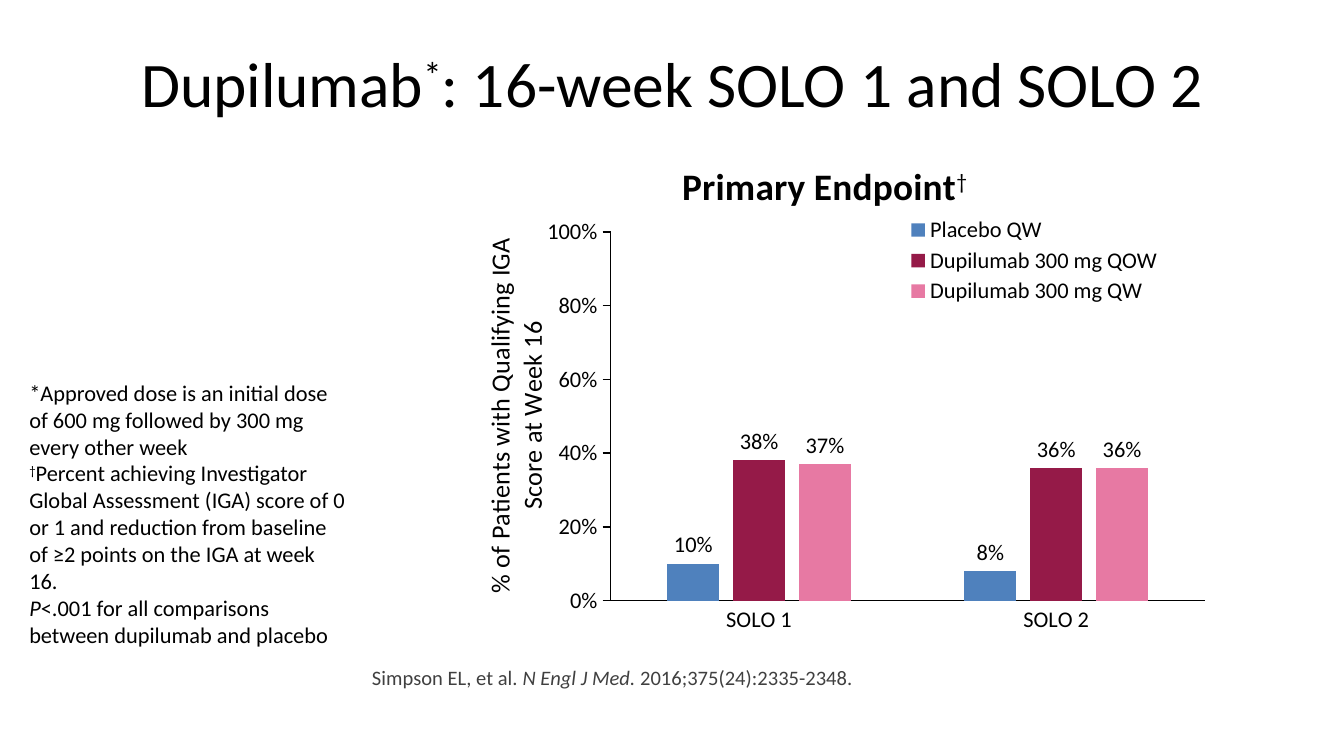
from lxml import etree
from pptx import Presentation
from pptx.chart.data import CategoryChartData
from pptx.dml.color import RGBColor
from pptx.enum import chart as ch, text
from pptx.oxml.ns import qn
from pptx.util import Pt

THEME = {
    "font": "Calibri", "ink": "000000", "grey": "404040",
    "title": 34, "chart_title": 20, "axis_title": 14, "body": 12, "source": 11,
}

# Each paragraph is a list of (words, style) runs
TITLE = [[("Dupilumab", ""), ("*", "super"), (": 16-week SOLO 1 and SOLO 2", "")]]
NOTES = [
    [("*Approved dose is an initial dose of 600 mg followed by 300 mg every other week", "")],
    [("†", "super"), ("Percent achieving Investigator Global Assessment (IGA) score of 0 or 1 "
                      "and reduction from baseline of ≥2 points on the IGA at week 16.", "")],
    [("P", "italic"), ("<.001 for all comparisons between dupilumab and placebo", "")],
]
SOURCE = [[("Simpson EL, et al. ", ""), ("N Engl J Med.", "italic"),
           (" 2016;375(24):2335-2348.", "")]]
CHART_TITLE = [[("Primary Endpoint", "bold"), ("†", "super")]]
AXIS_TITLE = [[("% of Patients with Qualifying IGA Score at Week 16", "")]]
CATEGORIES = ["SOLO 1", "SOLO 2"]
SERIES = [
    ("Placebo QW", (0.10, 0.08), "4F81BD"),
    ("Dupilumab 300 mg QOW", (0.38, 0.36), "951A48"),
    ("Dupilumab 300 mg QW", (0.37, 0.36), "E779A3"),
]

# Left, top, width, height in points
TITLE_BOX = (36, 10, 648, 68)
CHART_BOX = (230.4, 76.3, 415.4, 269.3)
NOTES_BOX = (8.6, 202.3, 183.6, 145.4)
SOURCE_BOX = (192.2, 354.2, 491.8, 46.8)


def rgb(code):
    return RGBColor.from_string(code)


def style_font(font, size, color=THEME["ink"]):
    font.name, font.size, font.bold = THEME["font"], Pt(size), False
    font.color.rgb = rgb(color)


def write(tf, paragraphs, size, color=THEME["ink"], align=None, spacing=None):
    for i, runs in enumerate(paragraphs):
        p = tf.add_paragraph() if i else tf.paragraphs[0]
        p.alignment, p.line_spacing = align, spacing
        for words, style in runs:
            r = p.add_run()
            r.text = words
            style_font(r.font, size, color)
            if style == "bold":
                r.font.bold = True
            elif style == "italic":
                r.font.italic = True
            elif style == "super":
                r._r.get_or_add_rPr().set("baseline", "30000")


def place(parent, before, x, y, w=None, h=None, inner=False):
    """Give a chart part a manual layout, in fractions of the chart."""
    for old in parent.findall(qn("c:layout")):
        parent.remove(old)
    layout = etree.Element(qn("c:layout"))
    manual = etree.SubElement(layout, qn("c:manualLayout"))
    values = [("layoutTarget", "inner")] if inner else []
    values += [("xMode", "edge"), ("yMode", "edge"), ("x", x), ("y", y), ("w", w), ("h", h)]
    for tag, value in values:
        if value is not None:
            etree.SubElement(manual, qn("c:" + tag)).set("val", str(value))
    after = next((e for e in parent if e.tag in [qn("c:" + t) for t in before]), None)
    if after is None:
        parent.append(layout)
    else:
        after.addprevious(layout)


def add_text(slide, box, paragraphs, size, anchor, **options):
    tf = slide.shapes.add_textbox(*map(Pt, box)).text_frame
    tf.word_wrap, tf.vertical_anchor = True, anchor
    write(tf, paragraphs, size, **options)


def add_endpoint_chart(slide):
    data = CategoryChartData(number_format="0%")
    data.categories = CATEGORIES
    for name, values, _ in SERIES:
        data.add_series(name, values)
    chart = slide.shapes.add_chart(
        ch.XL_CHART_TYPE.COLUMN_CLUSTERED, *map(Pt, CHART_BOX), data).chart
    style_font(chart.font, THEME["body"])

    chart.has_title = True
    write(chart.chart_title.text_frame, CHART_TITLE, THEME["chart_title"])
    chart.chart_title.include_in_layout = False
    place(chart.chart_title._element, ("overlay",), 0.32, 0.03)

    plot = chart.plots[0]
    plot.gap_width, plot.overlap, plot.vary_by_categories = 219, -27, False
    for series, (_, _, color) in zip(plot.series, SERIES):
        series.format.fill.solid()
        series.format.fill.fore_color.rgb = rgb(color)
        labels = series.data_labels
        labels.show_value = True
        labels.position = ch.XL_LABEL_POSITION.OUTSIDE_END
        labels.number_format, labels.number_format_is_linked = "0%", False
        style_font(labels.font, THEME["body"])
    place(chart._chartSpace.chart.plotArea, ("barChart",), 0.233, 0.178, 0.767, 0.734, True)

    marks = ch.XL_TICK_MARK
    for axis, mark in ((chart.category_axis, marks.NONE), (chart.value_axis, marks.OUTSIDE)):
        axis.major_tick_mark, axis.minor_tick_mark = mark, marks.NONE
        axis.has_major_gridlines = False
        axis.format.line.color.rgb = rgb(THEME["ink"])
        axis.format.line.width = Pt(0.75)
        style_font(axis.tick_labels.font, THEME["body"])
    axis = chart.value_axis
    axis.minimum_scale, axis.maximum_scale, axis.major_unit = 0, 1, 0.2
    axis.tick_labels.number_format = "0%"
    axis.tick_labels.number_format_is_linked = False
    axis.has_title = True
    tf = axis.axis_title.text_frame
    write(tf, AXIS_TITLE, THEME["axis_title"], align=text.PP_ALIGN.CENTER)
    body = tf._txBody.bodyPr
    body.set("rot", "-5400000")
    body.set("vert", "horz")
    place(axis.axis_title._element, ("overlay",), 0.06, 0.18)

    chart.has_legend = True
    legend = chart.legend
    legend.position = ch.XL_LEGEND_POSITION.BOTTOM
    legend.include_in_layout = False
    style_font(legend.font, THEME["body"])
    place(legend._element, ("overlay", "spPr", "txPr"), 0.61, 0.14, 0.34, 0.19)


def main():
    prs = Presentation()
    prs.slide_width, prs.slide_height = Pt(720), Pt(405)
    s = prs.slides.add_slide(prs.slide_layouts[5])

    title = s.shapes.title
    title.left, title.top, title.width, title.height = map(Pt, TITLE_BOX)
    title.text_frame.vertical_anchor = text.MSO_ANCHOR.MIDDLE
    write(title.text_frame, TITLE, THEME["title"], align=text.PP_ALIGN.CENTER)

    add_endpoint_chart(s)
    add_text(s, NOTES_BOX, NOTES, THEME["body"], text.MSO_ANCHOR.MIDDLE)
    add_text(s, SOURCE_BOX, SOURCE, THEME["source"], text.MSO_ANCHOR.TOP,
             color=THEME["grey"], spacing=0.9)
    prs.save("out.pptx")


if __name__ == "__main__":
    main()
